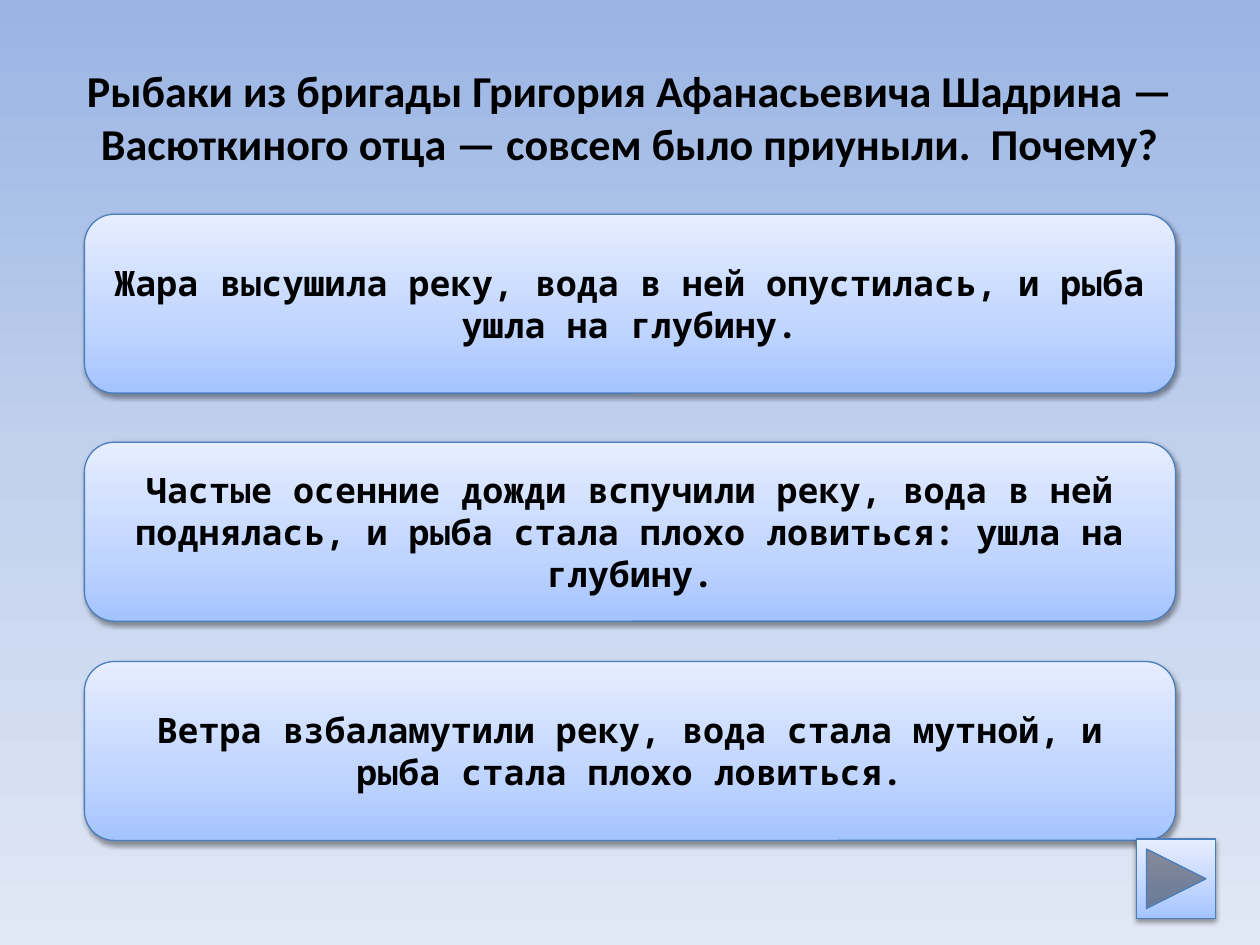
from dataclasses import dataclass

from lxml.etree import SubElement
from pptx import Presentation
from pptx.dml.color import RGBColor
from pptx.enum.shapes import MSO_SHAPE as Preset
from pptx.enum.text import MSO_ANCHOR as Anchor, PP_ALIGN as Align
from pptx.oxml.ns import qn
from pptx.util import Inches, Pt


@dataclass(frozen=True)
class Theme:
    """Colours, fonts and type sizes of the quiz."""
    sky: tuple = ((0, "9AB5E4"), (50, "C2D1ED"), (100, "E1E8F5"))
    panel: tuple = ((0, "A4C4FF"), (35, "BFD4FF"), (100, "E6EEFF"))
    outline: str = "4B7EBC"
    ink: str = "000000"
    question_font: str = "Calibri"
    question_size: float = 25.2
    answer_font: str = "Noto Sans Mono"
    answer_size: float = 20


THEME = Theme()
WIDTH, HEIGHT = Inches(10), Inches(7.5)
QUESTION = ("Рыбаки из бригады Григория Афанасьевича Шадрина — "
            "Васюткиного отца — совсем было приуныли.  Почему?")
ANSWERS = (
    (1.7, "Жара высушила реку, вода в ней опустилась, и рыба ушла на глубину."),
    (3.51, "Частые осенние дожди вспучили реку, вода в ней поднялась, "
           "и рыба стала плохо ловиться: ушла на глубину."),
    (5.25, "Ветра взбаламутили реку, вода стала мутной, "
           "и рыба стала плохо ловиться."),
)


def box(left, top, width, height):
    """Turn a box in grid units, ten columns by seven and a half rows, into lengths."""
    column, row = WIDTH / 10, HEIGHT / 7.5
    return [int(length) for length in
            (left * column, top * row, width * column, height * row)]


def fill_gradient(fill, element, stops, angle):
    """Fill with colour stops along a counter-clockwise angle."""
    fill.gradient()
    fill.gradient_angle = angle
    stop_list = next(element.iter(qn("a:gsLst")))
    for stop in list(stop_list):
        stop_list.remove(stop)
    for position, colour in stops:
        stop = SubElement(stop_list, qn("a:gs"), pos=str(position * 1000))
        SubElement(stop, qn("a:srgbClr"), val=colour)


def add_shadow(shape):
    """Cast a soft shadow straight down."""
    shape.shadow.inherit = False
    effects = shape._element.spPr.find(qn("a:effectLst"))
    shadow = SubElement(effects, qn("a:outerShdw"), blurRad=str(Pt(3.1)),
                        dist=str(Pt(1.6)), dir="5400000", rotWithShape="0")
    colour = SubElement(shadow, qn("a:srgbClr"), val="000000")
    SubElement(colour, qn("a:alpha"), val="38000")


def add_panel(slide, preset, area):
    """Add a glossy blue shape in the given area."""
    shape = slide.shapes.add_shape(preset, *area)
    fill_gradient(shape.fill, shape._element.spPr, THEME.panel, 90)
    shape.line.color.rgb = RGBColor.from_string(THEME.outline)
    shape.line.width = Pt(0.75)
    add_shadow(shape)
    return shape


def write_text(shape, text, font, size):
    """Write one bold centred paragraph in the middle of a shape."""
    frame = shape.text_frame
    frame.word_wrap = True
    frame.vertical_anchor = Anchor.MIDDLE
    paragraph = frame.paragraphs[0]
    paragraph.alignment = Align.CENTER
    run = paragraph.add_run()
    run.text = text
    run.font.name = font
    run.font.size = Pt(size)
    run.font.bold = True
    run.font.color.rgb = RGBColor.from_string(THEME.ink)


def add_question(slide, area):
    """Place the question in its area."""
    write_text(slide.shapes.add_textbox(*area), QUESTION,
               THEME.question_font, THEME.question_size)


def add_answer(slide, area, text):
    """Place one answer panel in its area."""
    write_text(add_panel(slide, Preset.ROUNDED_RECTANGLE, area), text,
               THEME.answer_font, THEME.answer_size)


def add_next_button(slide, area):
    """Place the forward button in its area."""
    add_panel(slide, Preset.ACTION_BUTTON_FORWARD_OR_NEXT, area)


def build_quiz_slide(presentation):
    """Add the slide with a question, three answers and a forward button."""
    slide = presentation.slides.add_slide(presentation.slide_layouts[6])
    fill_gradient(slide.background.fill, slide._element, THEME.sky, 270)
    add_question(slide, box(0.5, 0.3, 9, 1.25))
    for top, text in ANSWERS:
        add_answer(slide, box(0.67, top, 8.66, 1.42), text)
    add_next_button(slide, box(9.02, 6.66, 0.63, 0.63))


def main():
    """Build and save the presentation."""
    presentation = Presentation()
    presentation.slide_width, presentation.slide_height = WIDTH, HEIGHT
    build_quiz_slide(presentation)
    presentation.save("out.pptx")


if __name__ == "__main__":
    main()
